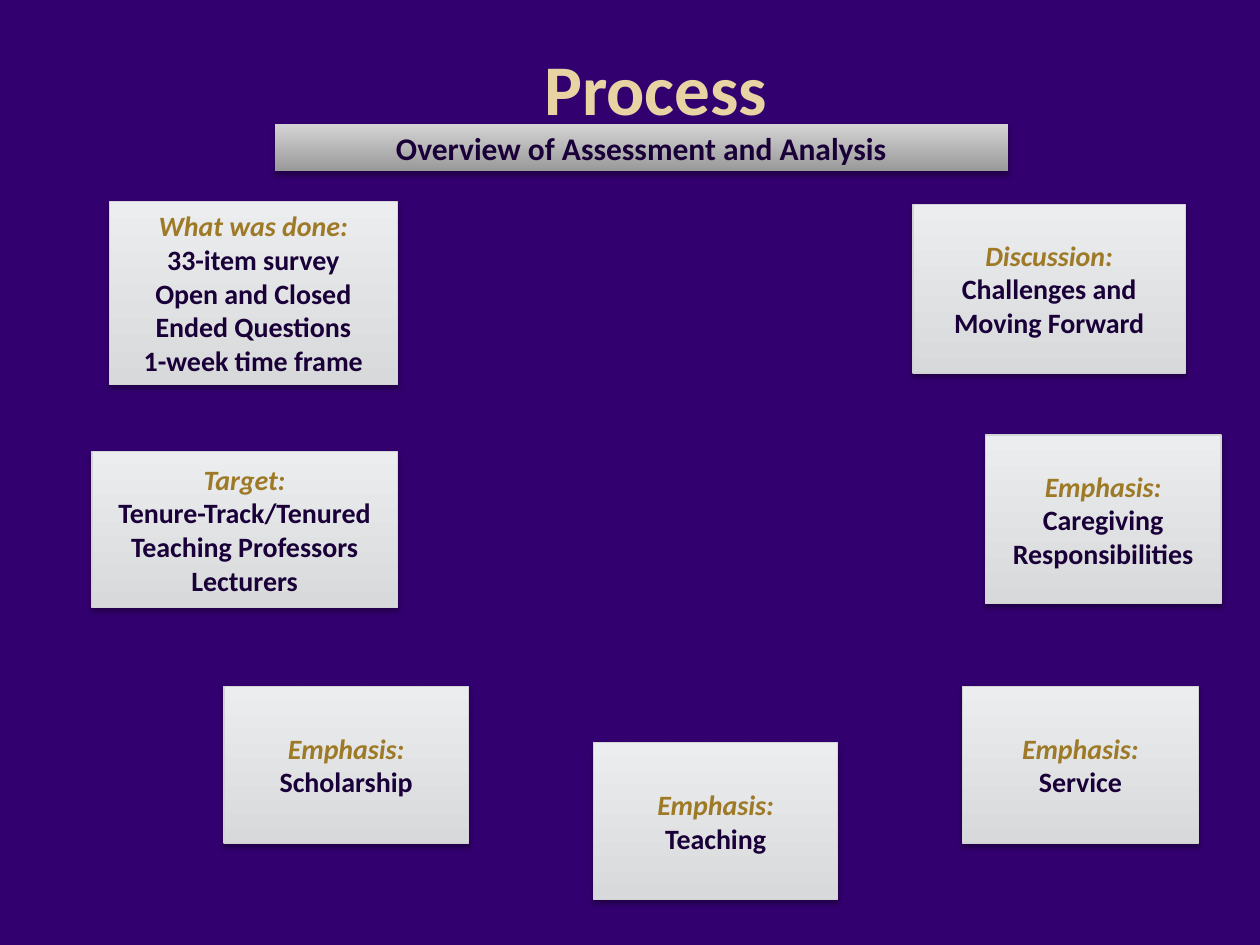
from dataclasses import dataclass

from lxml import etree
from pptx import Presentation
from pptx import util as u
from pptx.dml.color import RGBColor
from pptx.enum import shapes, text
from pptx.oxml import ns

PURPLE = RGBColor(0x33, 0x00, 0x6F)
INK = RGBColor(0x1A, 0x00, 0x38)
GOLD = RGBColor(0x9E, 0x7A, 0x27)
PALE_GOLD = RGBColor(0xE8, 0xD3, 0xA2)
BORDER = RGBColor(0xD3, 0xD4, 0xD5)
CARD_FILL = (RGBColor(0xD8, 0xD9, 0xDA), RGBColor(0xEB, 0xED, 0xEF))
BANNER_FILL = (RGBColor(0x99, 0x99, 0x99), RGBColor(0xD4, 0xD4, 0xD4))
BLACK = RGBColor(0x00, 0x00, 0x00)

BASE = {"name": "Calibri", "bold": True}
TITLE = BASE | {"size": u.Pt(40.7)}
BANNER = BASE | {"size": u.Pt(18)}
HEADING = BASE | {"size": u.Pt(16), "italic": True}
BODY = BASE | {"size": u.Pt(16), "italic": False}


@dataclass(frozen=True)
class Area:
    left: float
    top: float
    width: float
    height: float

    def lengths(self) -> list:
        return [u.Pt(n) for n in (self.left, self.top, self.width, self.height)]


@dataclass(frozen=True)
class Card:
    area: Area
    heading: str
    lines: tuple[str, ...]


CARDS = (
    Card(Area(62.6, 115.2, 164.4, 104.4), "What was done:",
         ("33-item survey", "Open and Closed Ended Questions", "1-week time frame")),
    Card(Area(52.6, 257.8, 174.4, 89.5), "Target:",
         ("Tenure-Track/Tenured", "Teaching Professors", "Lecturers")),
    Card(Area(128, 392.2, 139.7, 89.5), "Emphasis:", ("Scholarship",)),
    Card(Area(550, 392.2, 134.8, 89.5), "Emphasis:", ("Service",)),
    Card(Area(563, 248.6, 134.8, 96.5), "Emphasis:", ("Caregiving Responsibilities",)),
    Card(Area(521.7, 116.8, 155.8, 96.5), "Discussion:", ("Challenges and Moving Forward",)),
    Card(Area(339.1, 424.4, 139.7, 89.5), "Emphasis:", ("Teaching",)),
)


def write_line(para, words: str, formats: dict, color: RGBColor) -> None:
    para.alignment = text.PP_ALIGN.CENTER
    span = para.add_run()
    span.text = words
    for key, value in formats.items():
        setattr(span.font, key, value)
    span.font.color.rgb = color


def add_drop_shadow(box) -> None:
    box.shadow.inherit = False
    effects = box._element.spPr.find(ns.qn("a:effectLst"))
    shadow = etree.SubElement(effects, ns.qn("a:outerShdw"), blurRad=str(u.Pt(3.1)),
                              dist=str(u.Pt(1.8)), dir="5400000", rotWithShape="0")
    color = etree.SubElement(shadow, ns.qn("a:srgbClr"), val=str(BLACK))
    etree.SubElement(color, ns.qn("a:alpha"), val="35000")


def add_panel(page, area: Area, colors: tuple[RGBColor, RGBColor]):
    """Rectangle with a gradient rising from the first colour to the second."""
    box = page.shapes.add_shape(shapes.MSO_SHAPE.RECTANGLE, *area.lengths())
    box.fill.gradient()
    box.fill.gradient_angle = 90
    for stop, color in zip(box.fill.gradient_stops, colors):
        stop.color.rgb = color
    box.line.fill.background()
    add_drop_shadow(box)
    box.text_frame.word_wrap = True
    box.text_frame.vertical_anchor = text.MSO_ANCHOR.MIDDLE
    return box


def add_card(page, card: Card) -> None:
    box = add_panel(page, card.area, CARD_FILL)
    box.line.color.rgb = BORDER
    box.line.width = u.Pt(0.75)
    write_line(box.text_frame.paragraphs[0], card.heading, HEADING, GOLD)
    for line in card.lines:
        write_line(box.text_frame.add_paragraph(), line, BODY, INK)


def main() -> None:
    deck = Presentation()
    deck.slide_width, deck.slide_height = u.Pt(720), u.Pt(540)
    page = deck.slides.add_slide(deck.slide_layouts[6])
    page.background.fill.solid()
    page.background.fill.fore_color.rgb = PURPLE

    # Title and banner
    title = page.shapes.add_textbox(*Area(52.6, 21.6, 644.4, 49).lengths())
    title.text_frame.word_wrap = True
    write_line(title.text_frame.paragraphs[0], "Process", TITLE, PALE_GOLD)
    banner = add_panel(page, Area(157, 70.6, 419, 27.4), BANNER_FILL)
    write_line(banner.text_frame.paragraphs[0],
               "Overview of Assessment and Analysis", BANNER, INK)

    # Process cards
    for card in CARDS:
        add_card(page, card)

    deck.save("out.pptx")


if __name__ == "__main__":
    main()
